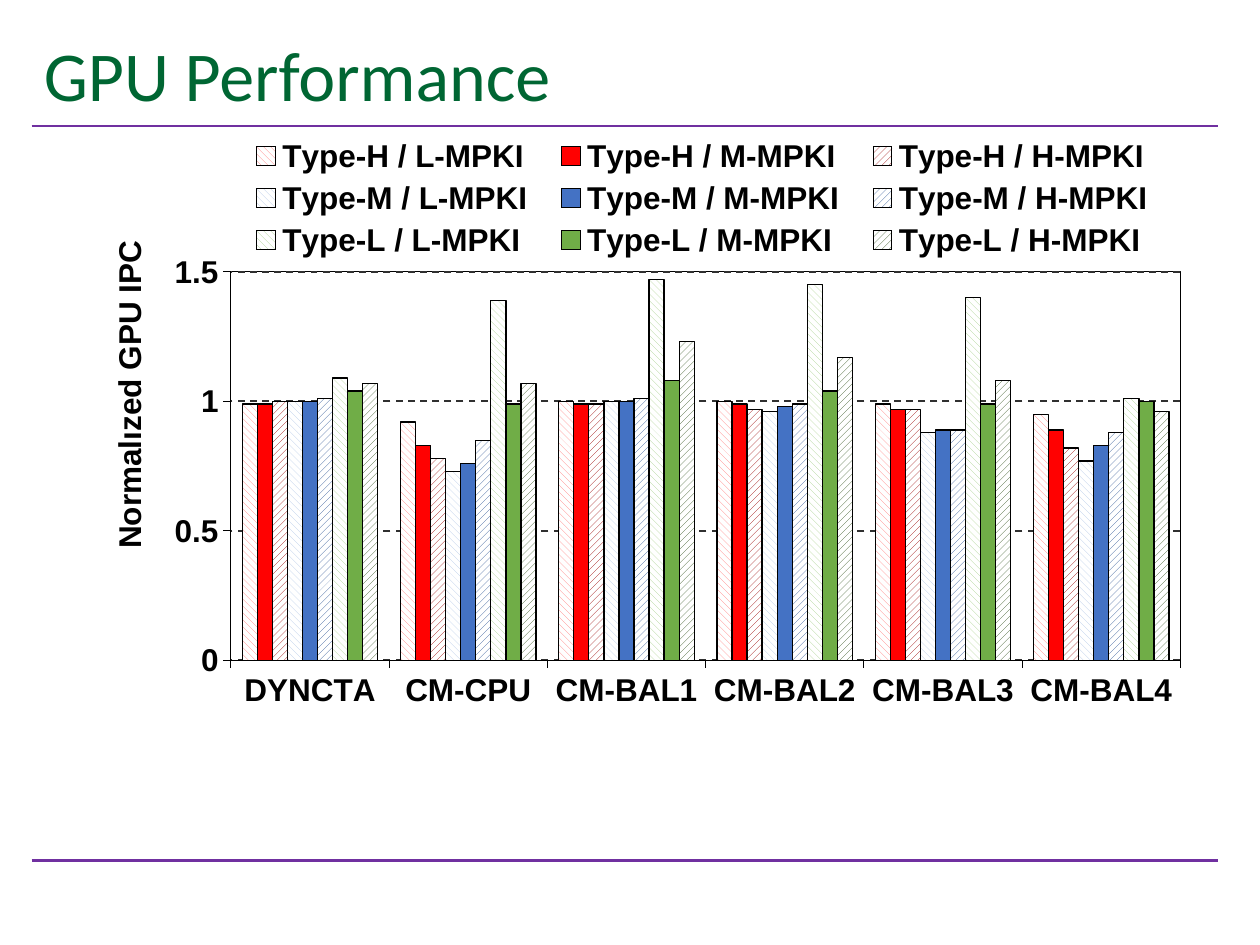
from dataclasses import dataclass

import pptx
import pptx.chart.data
import pptx.dml.color
import pptx.enum.chart
import pptx.enum.dml
import pptx.enum.shapes
import pptx.enum.text
import pptx.oxml
import pptx.oxml.ns
import pptx.util
from pptx.util import Inches

COLORS = {
    "rule": "7030A0", "title": "006633", "black": "000000", "white": "FFFFFF", "grid": "303030",
    "light red": "FF7D7D", "red": "FF0101", "dark red": "9A0000",
    "light blue": "B4C7E7", "blue": "4472C4", "dark blue": "2F5597",
    "light green": "A9D18E", "green": "70AD47", "dark green": "385723",
}
DOWN = pptx.enum.dml.MSO_PATTERN.WIDE_DOWNWARD_DIAGONAL
UP = pptx.enum.dml.MSO_PATTERN.WIDE_UPWARD_DIAGONAL
PATTERNS = {"L-MPKI": DOWN, "M-MPKI": None, "H-MPKI": UP}
LEFT, WIDTH = 0.25, 9.42
RULE_TOPS = (6.83, 1)
CATEGORIES = ["DYNCTA", "CM-CPU", "CM-BAL1", "CM-BAL2", "CM-BAL3", "CM-BAL4"]


@dataclass
class Bars:
    gpu_type: str
    mpki: str
    color: str
    values: tuple[float, ...]


SERIES = [
    Bars("Type-H", "L-MPKI", "light red", (0.99, 0.92, 1, 1, 0.99, 0.95)),
    Bars("Type-H", "M-MPKI", "red", (0.99, 0.83, 0.99, 0.99, 0.97, 0.89)),
    Bars("Type-H", "H-MPKI", "dark red", (1, 0.78, 0.99, 0.97, 0.97, 0.82)),
    Bars("Type-M", "L-MPKI", "light blue", (1, 0.73, 1, 0.96, 0.88, 0.77)),
    Bars("Type-M", "M-MPKI", "blue", (1, 0.76, 1, 0.98, 0.89, 0.83)),
    Bars("Type-M", "H-MPKI", "dark blue", (1.01, 0.85, 1.01, 0.99, 0.89, 0.88)),
    Bars("Type-L", "L-MPKI", "light green", (1.09, 1.39, 1.47, 1.45, 1.4, 1.01)),
    Bars("Type-L", "M-MPKI", "green", (1.04, 0.99, 1.08, 1.04, 0.99, 1)),
    Bars("Type-L", "H-MPKI", "dark green", (1.07, 1.07, 1.23, 1.17, 1.08, 0.96)),
]


def rgb(name: str) -> pptx.dml.color.RGBColor:
    return pptx.dml.color.RGBColor.from_string(COLORS[name])


def set_line(line, color: str, points: float) -> None:
    line.color.rgb = rgb(color)
    line.width = pptx.util.Pt(points)


def set_font(font, size: float, name: str, color: str, bold: bool = False) -> None:
    font.size = pptx.util.Pt(size)
    font.name = name
    font.bold = bold
    font.color.rgb = rgb(color)


def add_rule(slide, top: float) -> None:
    rule = slide.shapes.add_connector(
        pptx.enum.shapes.MSO_CONNECTOR.STRAIGHT,
        Inches(LEFT), Inches(top), Inches(LEFT + WIDTH), Inches(top))
    set_line(rule.line, "rule", 1.5)
    rule._element.spPr.append(pptx.oxml.parse_xml(
        f"<a:effectLst {pptx.oxml.ns.nsdecls('a')}/>"))


def add_title(slide, text: str) -> None:
    box = slide.shapes.add_textbox(Inches(LEFT), Inches(0.17), Inches(WIDTH), Inches(0.83))
    frame = box.text_frame
    frame.text = text
    frame.word_wrap = True
    frame.vertical_anchor = pptx.enum.text.MSO_ANCHOR.MIDDLE
    set_font(frame.paragraphs[0].runs[0].font, 40, "Calibri", "title")


def place(element, index: int, inner: bool = False, **fractions: float) -> None:
    """Give a chart part a manual layout in fractions of the chart's size."""
    for old in element.findall(pptx.oxml.ns.qn("c:layout")):
        element.remove(old)
    target = '<c:layoutTarget val="inner"/>' if inner else ""
    modes = '<c:xMode val="edge"/><c:yMode val="edge"/>'
    sizes = "".join(f'<c:{key} val="{value}"/>' for key, value in fractions.items())
    element.insert(index, pptx.oxml.parse_xml(
        f"<c:layout {pptx.oxml.ns.nsdecls('c')}><c:manualLayout>"
        f"{target}{modes}{sizes}</c:manualLayout></c:layout>"))


def format_bars(series, bars: Bars) -> None:
    fill = series.format.fill
    pattern = PATTERNS[bars.mpki]
    if pattern is None:
        fill.solid()
        fill.fore_color.rgb = rgb(bars.color)
    else:
        fill.patterned()
        fill.pattern = pattern
        fill.fore_color.rgb = rgb(bars.color)
        fill.back_color.rgb = rgb("white")
    series.invert_if_negative = False
    set_line(series.format.line, "black", 0.75)


def format_axes(chart) -> None:
    for axis in (chart.category_axis, chart.value_axis):
        axis.major_tick_mark = pptx.enum.chart.XL_TICK_MARK.OUTSIDE
        axis.minor_tick_mark = pptx.enum.chart.XL_TICK_MARK.NONE
        set_line(axis.format.line, "black", 0.5)
    axis = chart.value_axis
    axis.minimum_scale, axis.maximum_scale, axis.major_unit = 0, 1.5, 0.5
    axis.has_major_gridlines = True
    grid = axis.major_gridlines.format.line
    set_line(grid, "grid", 1)
    grid.dash_style = pptx.enum.dml.MSO_LINE.DASH
    frame = axis.axis_title.text_frame
    frame.text = "Normalızed GPU IPC"
    set_font(frame.paragraphs[0].runs[0].font, 18, "Arial", "black", True)
    frame._txBody.bodyPr.set("rot", "-5400000")
    frame._txBody.bodyPr.set("vert", "horz")
    place(axis.axis_title._element, 1, x=0.06, y=0.15)


def add_performance_chart(slide) -> None:
    data = pptx.chart.data.CategoryChartData()
    data.categories = CATEGORIES
    for bars in SERIES:
        data.add_series(f"{bars.gpu_type} / {bars.mpki}", bars.values)
    chart = slide.shapes.add_chart(
        pptx.enum.chart.XL_CHART_TYPE.COLUMN_CLUSTERED,
        Inches(LEFT), Inches(0.99), Inches(WIDTH), Inches(5.84), data).chart
    set_font(chart.font, 18, "Arial", "black", True)
    chart.has_title = False
    plot = chart.plots[0]
    plot.gap_width, plot.overlap, plot.vary_by_categories = 150, 0, False
    for series, bars in zip(plot.series, SERIES):
        format_bars(series, bars)
    format_axes(chart)

    chart.has_legend = True
    chart.legend.position = pptx.enum.chart.XL_LEGEND_POSITION.TOP
    chart.legend.include_in_layout = False
    place(chart.legend._element, 1, x=0.17, y=0.01, w=0.79, h=0.18)

    area = chart._chartSpace.chart.plotArea
    place(area, 0, inner=True, x=0.168, y=0.2, w=0.8, h=0.528)
    area.append(pptx.oxml.parse_xml(
        f"<c:spPr {pptx.oxml.ns.nsdecls('c', 'a')}><a:noFill/><a:ln w=\"6350\"><a:solidFill>"
        f"<a:srgbClr val=\"{COLORS['black']}\"/></a:solidFill></a:ln></c:spPr>"))


def main() -> None:
    deck = pptx.Presentation()
    deck.slide_width, deck.slide_height = Inches(10), Inches(7.5)
    slide = deck.slides.add_slide(deck.slide_layouts[6])
    for top in RULE_TOPS:
        add_rule(slide, top)
    add_title(slide, "GPU Performance")
    add_performance_chart(slide)
    deck.save("out.pptx")


if __name__ == "__main__":
    main()
